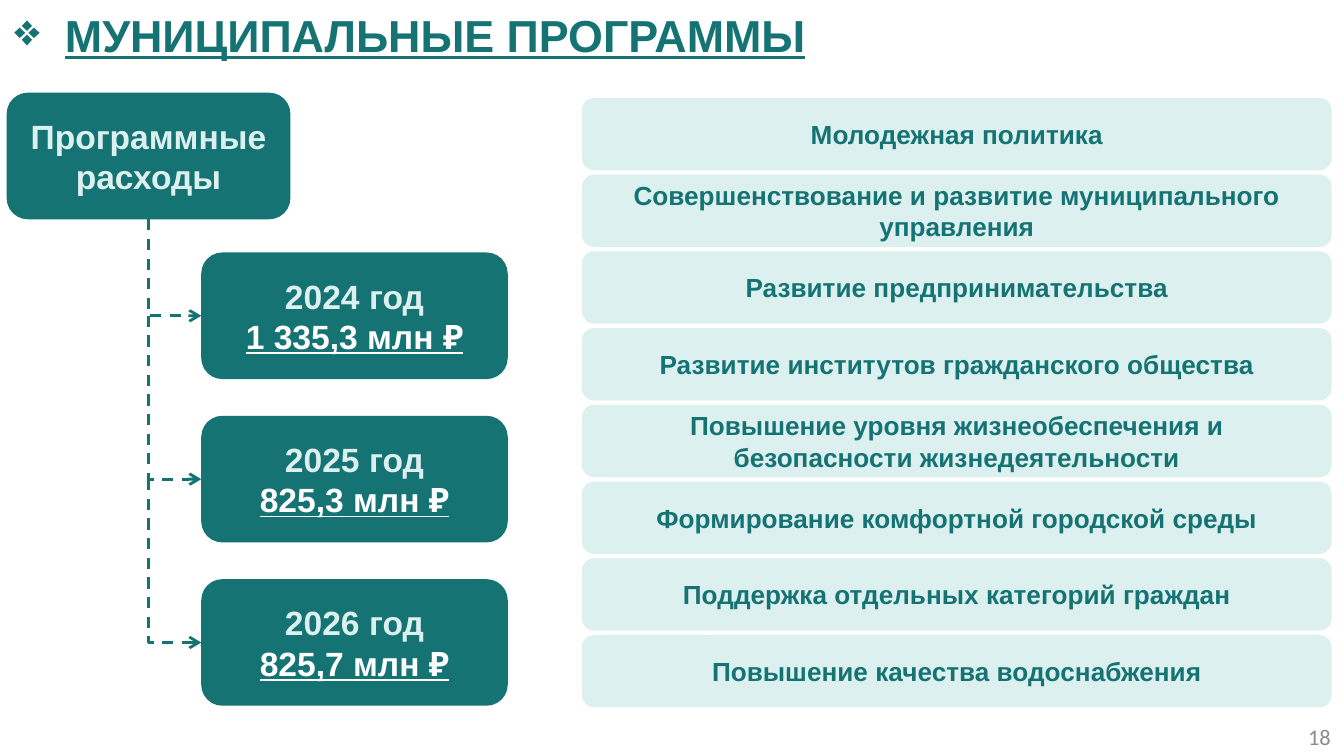
from dataclasses import dataclass

from lxml.etree import SubElement
from pptx import Presentation
from pptx.dml.color import RGBColor
from pptx.enum.dml import MSO_LINE
from pptx.enum.shapes import MSO_CONNECTOR, MSO_SHAPE
from pptx.enum.text import MSO_ANCHOR, MSO_AUTO_SIZE, PP_ALIGN
from pptx.oxml.ns import qn
from pptx.slide import Slide
from pptx.util import Pt

COLORS = {"teal": "167373", "mint": "DCF0F0", "white": "FFFFFF", "gray": "8C8C8C"}


@dataclass
class Box:
    left: float
    top: float
    width: float
    height: float
    text: str
    fill: str
    ink: str
    size: int


def tint(name: str) -> RGBColor:
    return RGBColor.from_string(COLORS[name])


def style(font, size: int, ink: str, face: str = "Arial", bold: bool = True) -> None:
    font.name = face
    font.size = Pt(size)
    font.bold = bold
    font.color.rgb = tint(ink)


def draw_box(slide: Slide, box: Box) -> None:
    shape = slide.shapes.add_shape(
        MSO_SHAPE.ROUNDED_RECTANGLE,
        Pt(box.left), Pt(box.top), Pt(box.width), Pt(box.height))
    shape.shadow.inherit = False
    shape.fill.solid()
    shape.fill.fore_color.rgb = tint(box.fill)
    shape.line.fill.background()
    frame = shape.text_frame
    frame.text = box.text
    frame.word_wrap = True
    frame.vertical_anchor = MSO_ANCHOR.MIDDLE
    for row, para in enumerate(frame.paragraphs):
        para.alignment = PP_ALIGN.CENTER
        font = para.runs[0].font
        style(font, box.size, box.ink)
        # The second line holds the sum
        if row:
            font.color.rgb = tint("white")
            font.underline = True


def draw_elbow(slide: Slide, left: float, top: float, right: float, low: float) -> None:
    """Go down, then right; the frame is turned by 270 degrees and flipped."""
    mid_x, mid_y = (left + right) / 2, (top + low) / 2
    half_w, half_h = (low - top) / 2, (right - left) / 2
    link = slide.shapes.add_connector(
        MSO_CONNECTOR.ELBOW,
        Pt(mid_x - half_w), Pt(mid_y - half_h),
        Pt(mid_x + half_w), Pt(mid_y + half_h))
    link.line.color.rgb = tint("teal")
    link.line.width = Pt(1.5)
    link.line.dash_style = MSO_LINE.DASH
    props = link._element.spPr
    frame = props.find(qn("a:xfrm"))
    frame.set("rot", "16200000")
    frame.set("flipH", "1")
    props.find(qn("a:prstGeom")).set("prst", "bentConnector2")
    SubElement(props.find(qn("a:ln")), qn("a:tailEnd"), type="arrow")
    SubElement(props, qn("a:effectLst"))


def draw_title(slide: Slide, text: str) -> None:
    frame = slide.shapes.add_textbox(Pt(-1.4), Pt(0.7), Pt(442), Pt(36)).text_frame
    frame.text = text
    frame.word_wrap = False
    frame.auto_size = MSO_AUTO_SIZE.SHAPE_TO_FIT_TEXT
    para = frame.paragraphs[0]
    para.alignment = PP_ALIGN.CENTER
    props = para._p.get_or_add_pPr()
    props.set("marL", str(Pt(27)))
    props.set("indent", str(-Pt(27)))
    SubElement(props, qn("a:buChar"), char="❖")
    font = para.runs[0].font
    style(font, 24, "teal")
    font.underline = True


def draw_page(slide: Slide, text: str) -> None:
    frame = slide.shapes.add_textbox(Pt(683.3), Pt(383.8), Pt(36.7), Pt(21.6)).text_frame
    frame.text = text
    frame.word_wrap = True
    frame.vertical_anchor = MSO_ANCHOR.MIDDLE
    para = frame.paragraphs[0]
    para.alignment = PP_ALIGN.RIGHT
    style(para.runs[0].font, 12, "gray", "Calibri", False)


YEARS = ["2024 год\n1 335,3 млн ₽", "2025 год\n825,3 млн ₽", "2026 год\n825,7 млн ₽"]
PLANS = [
    "Молодежная политика",
    "Совершенствование и развитие муниципального управления",
    "Развитие предпринимательства",
    "Развитие институтов гражданского общества",
    "Повышение уровня жизнеобеспечения и безопасности жизнедеятельности",
    "Формирование комфортной городской среды",
    "Поддержка отдельных категорий граждан",
    "Повышение качества водоснабжения",
]


def main() -> None:
    deck = Presentation()
    deck.slide_width, deck.slide_height = Pt(720), Pt(405)
    slide = deck.slides.add_slide(deck.slide_layouts[6])

    draw_page(slide, "18")
    draw_title(slide, "МУНИЦИПАЛЬНЫЕ ПРОГРАММЫ")

    # Tree of costs by year
    root = Box(3.6, 49.7, 152, 67.8, "Программные расходы", "teal", "mint", 18)
    draw_box(slide, root)
    trunk = root.left + root.width / 2
    start = root.top + root.height
    for i, text in enumerate(YEARS):
        year = Box(107.8, 135.3 + 87.5 * i, 164.2, 67.8, text, "teal", "mint", 18)
        draw_box(slide, year)
        end = year.top + year.height / 2
        draw_elbow(slide, trunk, start, year.left, end)
        start = end

    # List of plans
    for i, text in enumerate(PLANS):
        draw_box(slide, Box(311.8, 52.5 + 41.1 * i, 401.6, 38.7, text, "mint", "teal", 14))

    deck.save("out.pptx")


if __name__ == "__main__":
    main()
